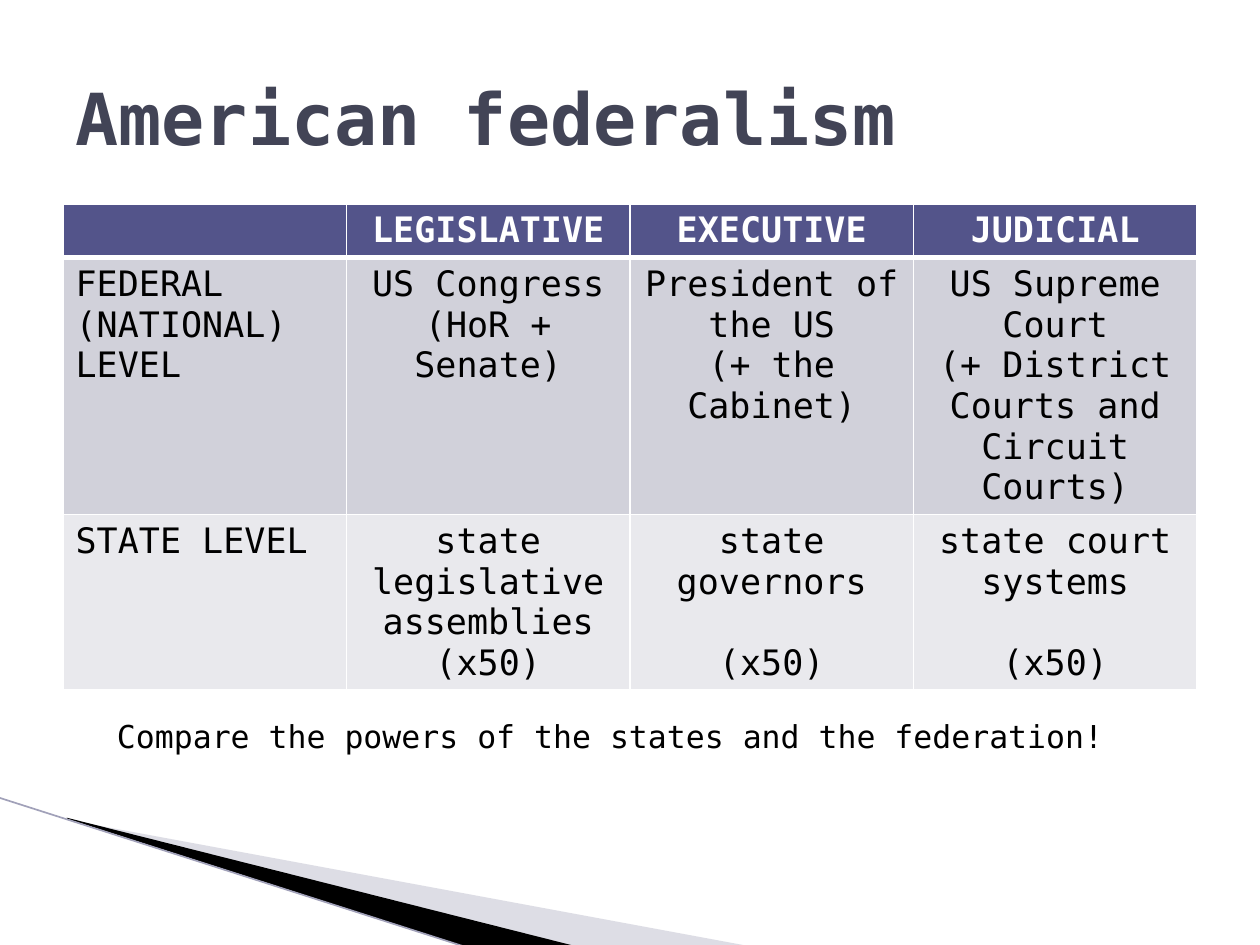
from dataclasses import dataclass

from lxml import etree
from pptx import Presentation
from pptx.dml.color import RGBColor
from pptx.enum.shapes import MSO_CONNECTOR
from pptx.enum.text import MSO_ANCHOR, MSO_AUTO_SIZE, PP_ALIGN
from pptx.oxml.ns import qn
from pptx.slide import Slide
from pptx.util import Inches, Pt

STRAIGHT = MSO_CONNECTOR.STRAIGHT
MIDDLE, TOP = MSO_ANCHOR.MIDDLE, MSO_ANCHOR.TOP
LEFT, CENTER = PP_ALIGN.LEFT, PP_ALIGN.CENTER
FIT_SHAPE, NO_FIT = MSO_AUTO_SIZE.SHAPE_TO_FIT_TEXT, MSO_AUTO_SIZE.NONE
WIDTH, HEIGHT = Inches(10), Inches(7.5)
COLORS = {
    "paper": "FFFFFF", "ink": "000000", "title": "424456", "header": "53548A",
    "federal": "D1D1DA", "state": "E9E9ED", "wedge": "AAAABF", "edge": "A1A1B9",
}
BRANCHES = [
    ("header", [[], ["LEGISLATIVE"], ["EXECUTIVE"], ["JUDICIAL"]]),
    ("federal", [
        ["FEDERAL (NATIONAL) LEVEL"],
        ["US Congress (HoR + Senate)"],
        ["President of the US", "(+ the Cabinet)"],
        ["US Supreme Court", "(+ District Courts and Circuit Courts)"],
    ]),
    ("state", [
        ["STATE LEVEL"],
        ["state legislative assemblies", "(x50)"],
        ["state governors", "(x50)"],
        ["state court systems", "(x50)"],
    ]),
]
LINE_GAPS = {"state governors": 23.3, "state court systems": 23.3}


def color(name):
    return RGBColor.from_string(COLORS[name])


def place(x, y):
    return round(WIDTH * x / 100), round(HEIGHT * y / 100)


@dataclass
class Deck:
    """Draws styled elements on a slide, with lengths in percent of its size."""

    slide: Slide
    font: str = "DejaVu Sans Mono"

    def run(self, paragraph, text, size, ink, bold=False, align=LEFT):
        paragraph.alignment = align
        run = paragraph.add_run()
        run.text = text
        run.font.name, run.font.size, run.font.bold = self.font, Pt(size), bold
        run.font.color.rgb = color(ink)

    def text(self, x, y, w, h, text, size, ink, bold=False, anchor=TOP, fit=NO_FIT):
        frame = self.slide.shapes.add_textbox(*place(x, y), *place(w, h)).text_frame
        frame.word_wrap, frame.auto_size, frame.vertical_anchor = True, fit, anchor
        self.run(frame.paragraphs[0], text, size, ink, bold)

    def outline(self, points, fill, opacity=100):
        start, *rest = [place(*point) for point in points]
        builder = self.slide.shapes.build_freeform(*start)
        builder.add_line_segments(rest, close=True)
        shape = builder.convert_to_shape()
        shape.shadow.inherit = False
        shape.line.fill.background()
        shape.fill.solid()
        shape.fill.fore_color.rgb = color(fill)
        if opacity < 100:
            tint = shape._element.spPr.find(qn("a:solidFill")).find(qn("a:srgbClr"))
            etree.SubElement(tint, qn("a:alpha"), val=str(opacity * 1000))

    def line(self, start, end, ink, width):
        line = self.slide.shapes.add_connector(STRAIGHT, *place(*start), *place(*end))
        line.line.color.rgb, line.line.width = color(ink), Pt(width)
        etree.SubElement(line._element.spPr, qn("a:effectLst"))

    def borders(self, cell, top, bottom):
        properties = cell._tc.get_or_add_tcPr()
        widths = {"lnL": 1, "lnR": 1, "lnT": top, "lnB": bottom}
        for index, (side, width) in enumerate(widths.items()):
            border = etree.Element(qn("a:" + side), w=str(Pt(width)))
            fill = etree.SubElement(border, qn("a:solidFill"))
            etree.SubElement(fill, qn("a:srgbClr"), val=COLORS["paper"])
            properties.insert(index, border)

    def table(self, x, y, w, h, row_height, rows):
        holder = self.slide.shapes.add_table(
            len(rows), len(rows[0][1]), *place(x, y), *place(w, row_height * len(rows)))
        holder.height = place(w, h)[1]
        table = holder.table
        table.horz_banding = False
        for r, (level, entries) in enumerate(rows):
            heading = r == 0
            for c, lines in enumerate(entries):
                cell = table.cell(r, c)
                cell.fill.solid()
                cell.fill.fore_color.rgb = color(level)
                self.borders(cell, 3 if r == 1 else 1, 3 if heading else 1)
                frame = cell.text_frame
                for i, text in enumerate(lines):
                    paragraph = frame.add_paragraph() if i else frame.paragraphs[0]
                    if i and lines[0] in LINE_GAPS:
                        paragraph.space_before = Pt(LINE_GAPS[lines[0]])
                    self.run(paragraph, text, 20, "paper" if heading else "ink",
                             heading, CENTER if c else LEFT)


def main():
    presentation = Presentation()
    presentation.slide_width, presentation.slide_height = WIDTH, HEIGHT
    deck = Deck(presentation.slides.add_slide(presentation.slide_layouts[6]))
    deck.outline([(5.5, 86.8), (59.5, 100.13), (45.6, 100.13), (5.5, 86.67)], "wedge", 40)
    deck.outline([(5.3, 86.53), (45.7, 100.13), (37.2, 100.27), (5.4, 86.67)], "ink")
    deck.line((-0.1, 84.4), (37.1, 100.27), "edge", 0.95)
    deck.table(5, 21.6, 90, 48.4, 5.47, BRANCHES)
    deck.text(5, 4, 90, 16.67, "American federalism", 41, "title", True, MIDDLE)
    deck.text(8.3, 75.2, 85.8, 5.33, "Compare the powers of the states and the federation!",
              18, "ink", fit=FIT_SHAPE)
    presentation.save("out.pptx")


if __name__ == "__main__":
    main()
